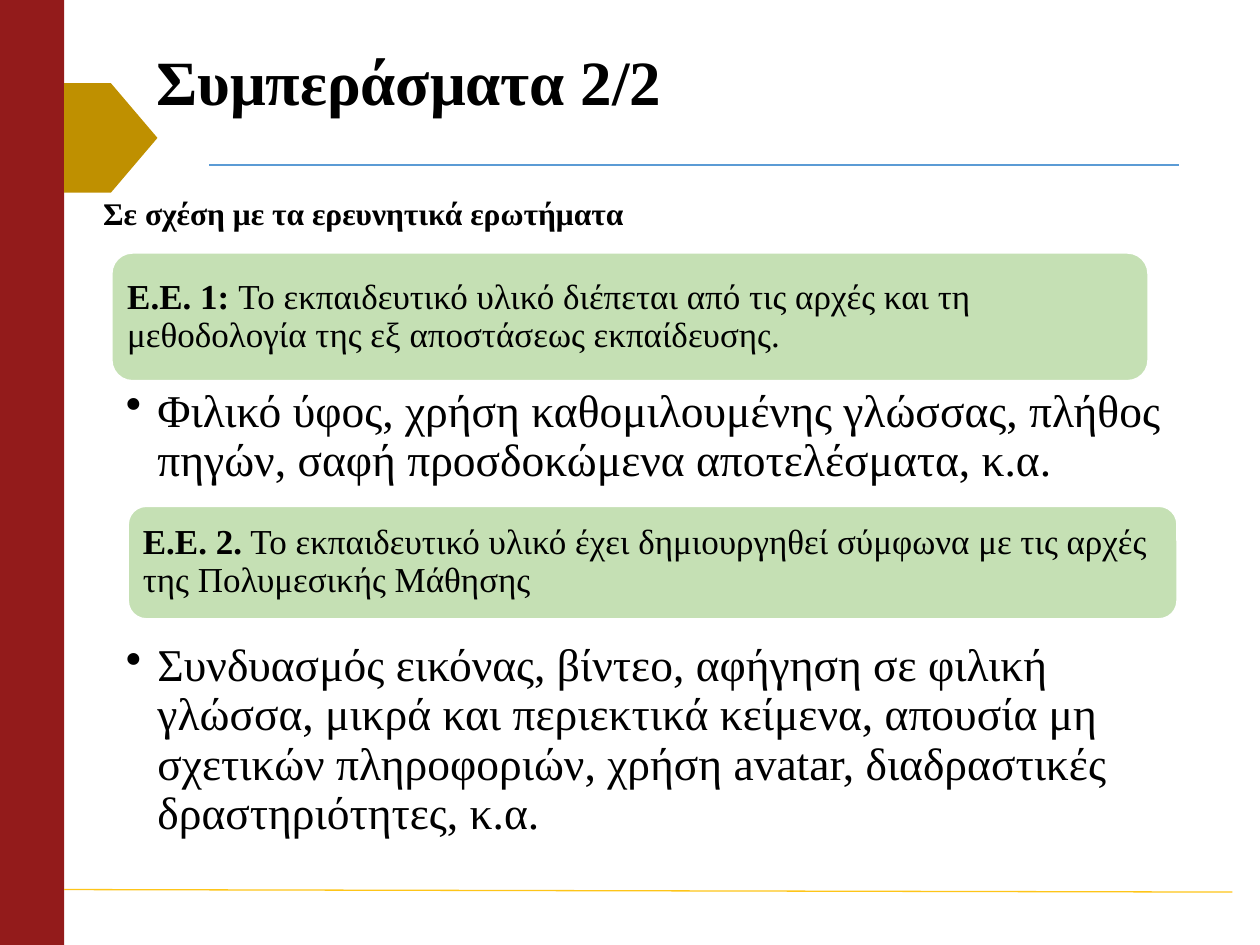
from lxml import etree
from pptx import Presentation
from pptx.dml.color import RGBColor
from pptx.enum import shapes, text
from pptx.oxml.ns import qn
from pptx.util import Inches, Pt

FONT = "Times New Roman"
SHAPE = shapes.MSO_SHAPE
ANCHOR = text.MSO_ANCHOR


def color(fmt, tone):
    """Give a colour format or a solid fill its hex colour."""
    fmt.rgb = RGBColor.from_string(tone)


def block(slide, kind, box, tone):
    """Add a plain filled shape."""
    shape = slide.shapes.add_shape(kind, *map(Inches, box))
    shape.shadow.inherit = False
    shape.fill.solid()
    color(shape.fill.fore_color, tone)
    shape.line.fill.background()
    return shape


def rule(slide, start, end, tone):
    """Add a thin coloured line."""
    line = slide.shapes.add_connector(
        shapes.MSO_CONNECTOR.STRAIGHT, *map(Inches, start + end))
    color(line.line.color, tone)
    line.line.width = Pt(0.75)
    etree.SubElement(line._element.spPr, qn("a:effectLst"))


def write(shape, runs, size, pads, anchor=ANCHOR.TOP, gap=0.9):
    """Fill a shape with one paragraph of (words, bold) runs."""
    frame = shape.text_frame
    frame.word_wrap = True
    frame.auto_size = text.MSO_AUTO_SIZE.NONE
    frame.vertical_anchor = anchor
    (frame.margin_left, frame.margin_top,
     frame.margin_right, frame.margin_bottom) = map(Inches, pads)
    para = frame.paragraphs[0]
    para.alignment = text.PP_ALIGN.LEFT
    para.line_spacing = gap
    para.font.name = FONT
    para.font.size = Pt(size)
    color(para.font.color, "000000")
    for words, bold in runs:
        run = para.add_run()
        run.text = words
        run.font.bold = bold
    return para


def head(slide, words):
    """Place and format the title."""
    title = slide.shapes.title
    title.left, title.top, title.width, title.height = map(
        Inches, (1.14, 0.36, 8.5, 0.63))
    write(title, [(words, True)], 36, (0.1, 0.05, 0.1, 0.05), ANCHOR.MIDDLE)


def label(slide, box, words):
    """Add a bold line of text."""
    area = slide.shapes.add_textbox(*map(Inches, box))
    write(area, [(words, True)], 18, (0.1, 0.05, 0.1, 0.05), gap=1)


def card(slide, box, lead, words):
    """Add a green rounded panel with a bold lead."""
    shape = block(slide, SHAPE.ROUNDED_RECTANGLE, box, "C5E0B4")
    color(shape.line.color, "FFFFFF")
    shape.line.width = Pt(2)
    write(shape, [(lead, True), (words, False)], 20, (0.08,) * 4,
          ANCHOR.MIDDLE)


def point(slide, top, height, words):
    """Add a bulleted paragraph."""
    area = slide.shapes.add_textbox(
        *map(Inches, (0.72, top, 8.93, height)))
    para = write(area, [(words, False)], 26, (0.28, 0.04, 0.2, 0.04))
    props = para._p.get_or_add_pPr()
    props.set("marL", str(Inches(0.5)))
    props.set("indent", str(-Inches(0.25)))
    props.set("marL", str(Inches(0.25)))
    mark = etree.Element(qn("a:buChar"), char="•")
    props.find(qn("a:defRPr")).addprevious(mark)


def main():
    """Build the slide and save it."""
    deck = Presentation()
    deck.slide_width, deck.slide_height = Inches(10), Inches(7.5)
    slide = deck.slides.add_slide(deck.slide_layouts[5])

    block(slide, SHAPE.RECTANGLE, (0, 0, 0.51, 7.5), "931B1B")
    rule(slide, (1.66, 1.31), (9.36, 1.31), "5B9BD5")
    rule(slide, (0.51, 7.06), (9.78, 7.08), "FEC519")
    block(slide, SHAPE.PENTAGON, (0.51, 0.66, 0.74, 0.87), "BF9000")

    head(slide, "Συμπεράσματα 2/2")
    label(slide, (0.72, 1.49, 6.25, 0.4),
          "Σε σχέση με τα ερευνητικά ερωτήματα")
    card(slide, (0.88, 2, 8.24, 1.03), "Ε.Ε. 1: ",
         "Το εκπαιδευτικό υλικό διέπεται από τις αρχές και τη "
         "μεθοδολογία της εξ αποστάσεως εκπαίδευσης.")
    point(slide, 3.04, 1.1,
          "Φιλικό ύφος, χρήση καθομιλουμένης γλώσσας, πλήθος πηγών, "
          "σαφή προσδοκώμενα αποτελέσματα, κ.α.")
    card(slide, (1.01, 4.01, 8.34, 0.91), "Ε.Ε. 2.",
         " Το εκπαιδευτικό υλικό έχει δημιουργηθεί σύμφωνα με τις αρχές "
         "της Πολυμεσικής Μάθησης")
    point(slide, 5.06, 1.59,
          "Συνδυασμός εικόνας, βίντεο, αφήγηση σε φιλική γλώσσα, μικρά "
          "και περιεκτικά κείμενα, απουσία μη σχετικών πληροφοριών, "
          "χρήση avatar, διαδραστικές δραστηριότητες, κ.α.")
    deck.save("out.pptx")


if __name__ == "__main__":
    main()
